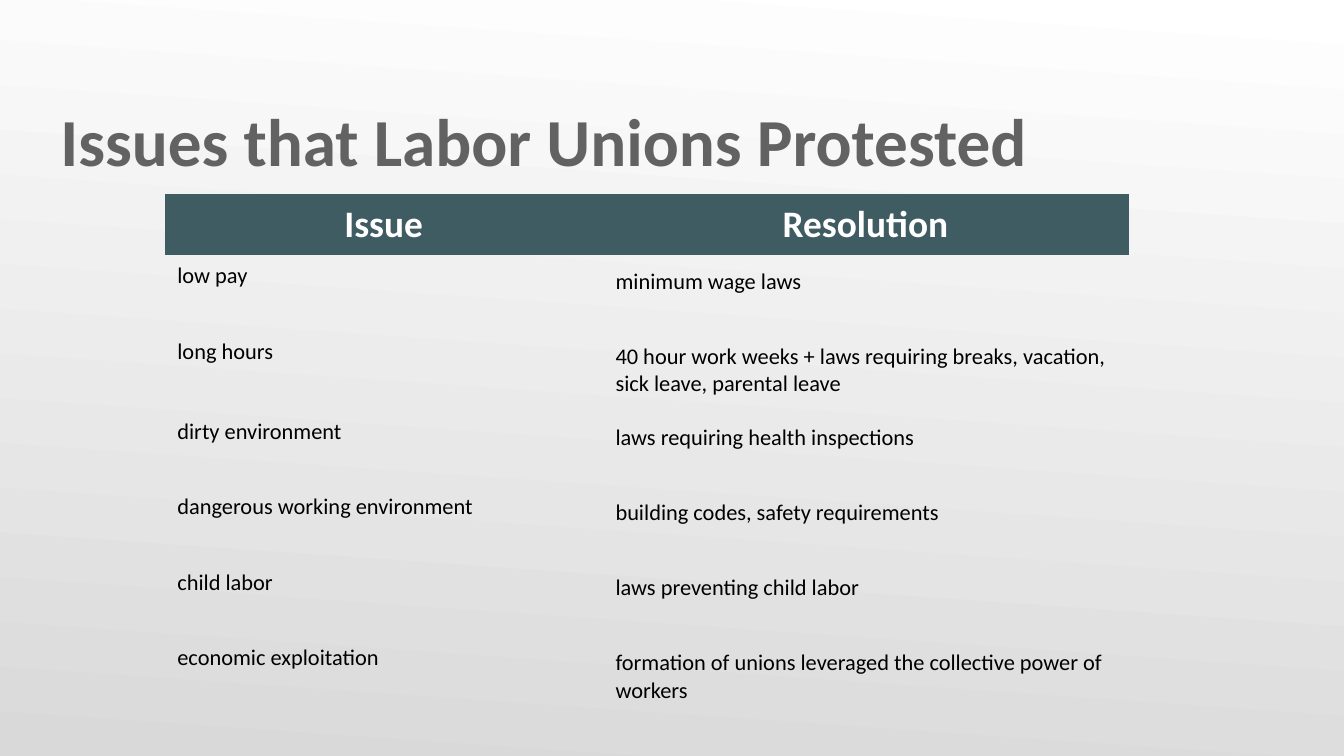
from pptx import Presentation
from pptx import util as u
from pptx.dml.color import RGBColor
from pptx.enum import text

WIDTH = 10
HEIGHT = WIDTH * 9 / 16
WHITE = RGBColor(0xFF, 0xFF, 0xFF)
SILVER = RGBColor(0xD9, 0xD9, 0xD9)
GREY = RGBColor(0x62, 0x62, 0x62)
TEAL = RGBColor(0x3E, 0x5C, 0x61)
BLACK = RGBColor(0, 0, 0)

TITLE = "Issues that Labor Unions Protested"
HEADER = ("Issue", "Resolution")
ISSUES = [
    ("low pay", "minimum wage laws"),
    ("long hours", "40 hour work weeks + laws requiring breaks, vacation, "
                   "sick leave, parental leave"),
    ("dirty environment", "laws requiring health inspections"),
    ("dangerous working environment", "building codes, safety requirements"),
    ("child labor", "laws preventing child labor"),
    ("economic exploitation",
     "formation of unions leveraged the collective power of workers"),
]

COLUMN_WIDTHS = (3.25, 3.92)
HEADER_HEIGHT, ROW_HEIGHT = 0.45, 0.56

TITLE_FONT = {"size": u.Pt(36), "bold": True}
HEADER_FONT = {"size": u.Pt(20), "bold": True}
BODY_FONT = {"size": u.Pt(12), "bold": False}

# Cell margins: left, top, right, bottom
HEADER_MARGINS = (0.06, 0.06, 0.06, 0.06)
BODY_MARGINS = ((0.09, 0.06, 0.06, 0.06), (0.1, 0.1, 0.1, 0.1))


def set_margins(target, margins):
    for side, value in zip(("left", "top", "right", "bottom"), margins):
        setattr(target, f"margin_{side}", u.Inches(value))


def write(frame, words, font, color, align=text.PP_ALIGN.LEFT):
    paragraph = frame.paragraphs[0]
    paragraph.alignment = align
    run = paragraph.add_run()
    run.text = words
    run.font.name = "Calibri"
    run.font.color.rgb = color
    for name, value in font.items():
        setattr(run.font, name, value)


def add_background(slide):
    fill = slide.background.fill
    fill.gradient()
    fill.gradient_angle = 266
    for stop, color in zip(fill.gradient_stops, (WHITE, SILVER)):
        stop.color.rgb = color


def add_title(slide):
    box = slide.shapes.add_textbox(*map(u.Inches, (0.45, 0.4, 7.45, 0.94)))
    frame = box.text_frame
    frame.word_wrap = True
    frame.vertical_anchor = text.MSO_ANCHOR.BOTTOM
    set_margins(frame, (0, 0.05, 0, 0))
    write(frame, TITLE, TITLE_FONT, GREY)


def add_issue_table(slide):
    rows = [HEADER, *ISSUES]
    height = HEADER_HEIGHT + ROW_HEIGHT * len(ISSUES)
    frame = slide.shapes.add_table(
        len(rows), len(HEADER),
        *map(u.Inches, (1.23, 1.44, sum(COLUMN_WIDTHS), height)))
    table = frame.table
    table.horz_banding = False
    for column, width in zip(table.columns, COLUMN_WIDTHS):
        column.width = u.Inches(width)
    for r, row in enumerate(rows):
        table.rows[r].height = u.Inches(ROW_HEIGHT if r else HEADER_HEIGHT)
        for c, words in enumerate(row):
            cell = table.cell(r, c)
            if r == 0:
                cell.fill.solid()
                cell.fill.fore_color.rgb = TEAL
                set_margins(cell, HEADER_MARGINS)
                write(cell.text_frame, words, HEADER_FONT, WHITE,
                      text.PP_ALIGN.CENTER)
            else:
                cell.fill.background()
                set_margins(cell, BODY_MARGINS[c])
                write(cell.text_frame, words, BODY_FONT, BLACK)
    # "No Style, No Grid" keeps the cells free of borders
    style = frame._element.xpath(".//a:tableStyleId")[0]
    style.text = "{2D5ABB26-0587-4C30-8999-92F81FD0307C}"


def main():
    presentation = Presentation()
    presentation.slide_width = u.Inches(WIDTH)
    presentation.slide_height = u.Inches(HEIGHT)
    slide = presentation.slides.add_slide(presentation.slide_layouts[6])
    add_background(slide)
    add_title(slide)
    add_issue_table(slide)
    presentation.save("out.pptx")


if __name__ == "__main__":
    main()
